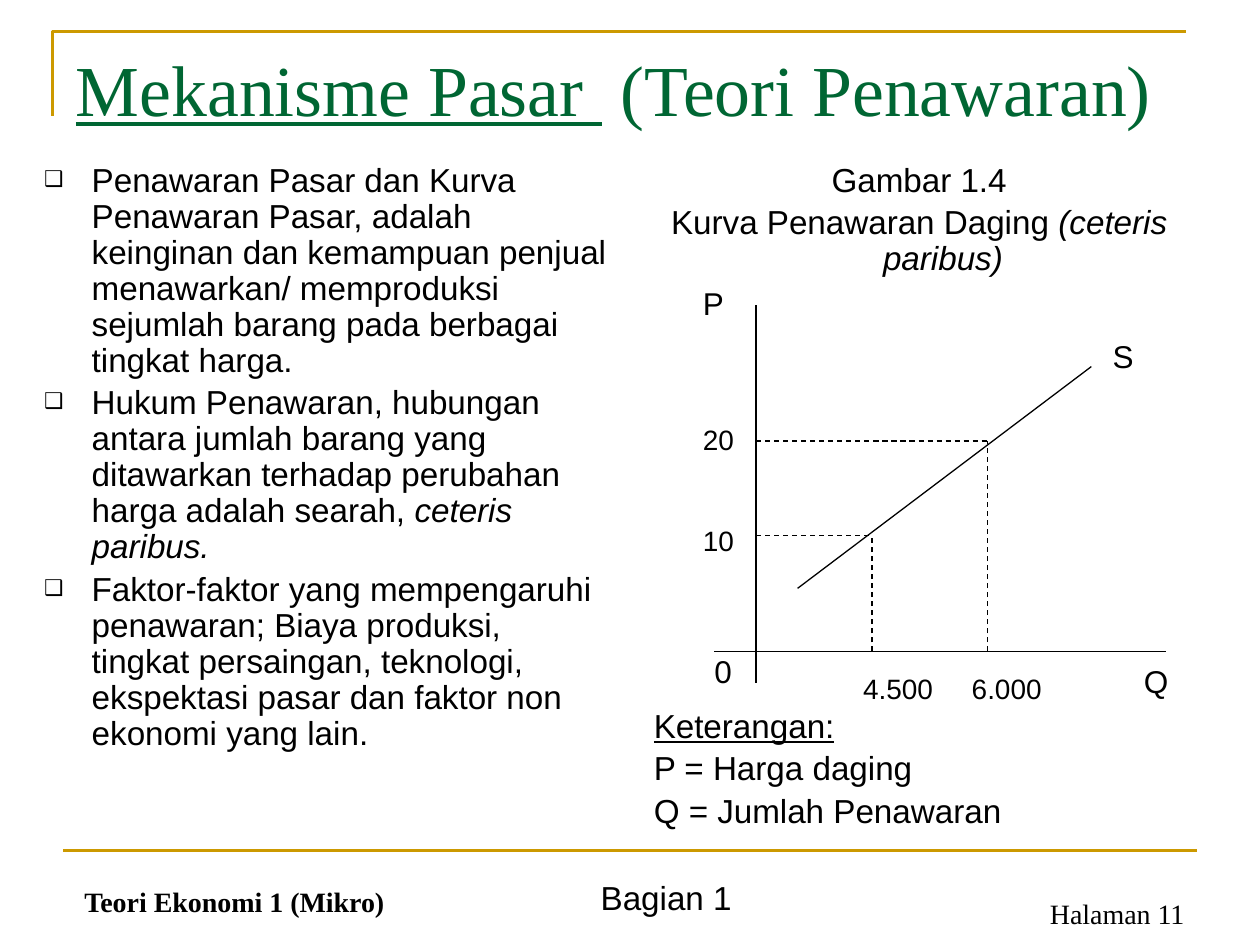
from lxml.etree import SubElement
from pptx import Presentation
from pptx.dml.color import RGBColor
from pptx.enum.dml import MSO_LINE
from pptx.enum.shapes import MSO_CONNECTOR
from pptx.enum.text import MSO_ANCHOR, PP_ALIGN
from pptx.oxml.ns import qn
from pptx.util import Cm, Pt

COLORS = {"text": "000000", "title": "006633", "rule": "CC9900"}
SANS, SERIF = "Arial", "Times New Roman"

# Diagram geometry in centimetres
AXIS_X, AXIS_Y = 15.24, 13.13
POINTS = [(17.58, 10.8), (19.91, 8.89)]
LABEL_W, LABEL_H = 2.2, 1.0

BULLETS = [
    [("Penawaran Pasar dan Kurva Penawaran Pasar, adalah keinginan dan "
      "kemampuan penjual menawarkan/ memproduksi sejumlah barang pada "
      "berbagai tingkat harga.", "")],
    [("Hukum Penawaran, hubungan antara jumlah barang yang ditawarkan "
      "terhadap perubahan harga adalah searah, ", ""),
     ("ceteris paribus.", "i")],
    [("Faktor-faktor yang mempengaruhi penawaran; Biaya produksi, tingkat "
      "persaingan, teknologi, ekspektasi pasar dan faktor non ekonomi yang "
      "lain.", "")],
]
CAPTION = [
    [("Gambar 1.4", "")],
    [("Kurva Penawaran Daging ", ""), ("(ceteris paribus)", "i")],
]
LEGEND = [
    [("Keterangan:", "u")],
    [("P = Harga daging", "")],
    [("Q = Jumlah Penawaran", "")],
]
LABELS = [
    ("P", 13.92, 5.61, 18),
    ("20", 13.92, 8.4, 16),
    ("10", 13.92, 10.42, 16),
    ("S", 22.18, 6.67, 18),
    ("0", 14.15, 13.02, 18),
    ("4.500", 17.15, 13.41, 16),
    ("6.000", 19.34, 13.41, 16),
    ("Q", 22.81, 13.23, 18),
]


def add_frame(slide, x, y, w, h, anchor=MSO_ANCHOR.TOP):
    tf = slide.shapes.add_textbox(Cm(x), Cm(y), Cm(w), Cm(h)).text_frame
    tf.word_wrap = True
    tf.vertical_anchor = anchor
    return tf


def add_runs(p, runs, size, font=SANS, color="text"):
    """Add (text, style) runs; style letters are b, i and u."""
    for text, style in runs:
        r = p.add_run()
        r.text = text
        r.font.name = font
        r.font.size = Pt(size)
        r.font.color.rgb = RGBColor.from_string(COLORS[color])
        r.font.bold = "b" in style
        r.font.italic = "i" in style
        r.font.underline = "u" in style


def add_text(slide, box, runs, size, font=SANS, color="text",
             align=PP_ALIGN.LEFT, anchor=MSO_ANCHOR.TOP):
    p = add_frame(slide, *box, anchor).paragraphs[0]
    p.alignment = align
    add_runs(p, runs, size, font, color)


def add_body_paragraph(tf, runs, align=PP_ALIGN.LEFT, before=3.6, bullet=None):
    """Add a paragraph with a hanging indent and an optional bullet."""
    p = tf.paragraphs[0] if not tf.text else tf.add_paragraph()
    p.alignment = align
    p.line_spacing = Pt(20.57)
    p.space_before = Pt(before)
    pPr = p._p.get_or_add_pPr()
    pPr.set("marL", str(Cm(0.96)))
    pPr.set("indent", str(Cm(-0.96)))
    if bullet:
        SubElement(pPr, qn("a:buSzPct"), val="65000")
        SubElement(pPr, qn("a:buFont"), typeface=SANS)
        SubElement(pPr, qn("a:buChar"), char=bullet)
    add_runs(p, runs, 19)


def add_line(slide, start, end, color="text", width=0.75, dashed=False):
    s = slide.shapes.add_connector(
        MSO_CONNECTOR.STRAIGHT, *(Cm(v) for v in (*start, *end)))
    s.line.color.rgb = RGBColor.from_string(COLORS[color])
    s.line.width = Pt(width)
    if dashed:
        s.line.dash_style = MSO_LINE.DASH
    SubElement(s._element.spPr, qn("a:effectLst"))


def add_corner_rule(slide):
    fb = slide.shapes.build_freeform(Cm(1.06), Cm(2.33))
    fb.add_line_segments(
        [(Cm(1.06), Cm(0.64)), (Cm(23.9), Cm(0.64))], close=False)
    sp = fb.convert_to_shape()
    sp.shadow.inherit = False
    sp.fill.background()
    sp.line.color.rgb = RGBColor.from_string(COLORS["rule"])
    sp.line.width = Pt(1.5)


def add_footer(slide):
    add_text(slide, (11.86, 17.56, 5.28, 1.07), [("Bagian 1", "")], 19)
    add_text(slide, (1.45, 17.36, 9.35, 1.27),
             [("Teori Ekonomi 1 (Mikro)", "b")], 16, SERIF,
             anchor=MSO_ANCHOR.BOTTOM)
    add_text(slide, (18.21, 17.94, 5.92, 0.9), [("Halaman 11", "")], 16,
             SERIF, align=PP_ALIGN.RIGHT)


def add_body(slide):
    tf = add_frame(slide, 0.64, 3.16, 11.84, 13.87)
    for runs in BULLETS:
        add_body_paragraph(tf, runs, bullet="❑")
    tf = add_frame(slide, 12.93, 3.16, 11.2, 14.17)
    for runs in CAPTION:
        add_body_paragraph(tf, runs, PP_ALIGN.CENTER)
    for i, runs in enumerate(LEGEND):
        # The first legend line leaves room for the diagram above it
        add_body_paragraph(tf, runs, before=3.6 if i else 246.8)


def add_supply_diagram(slide):
    add_line(slide, (AXIS_X, 6.15), (AXIS_X, 13.77))
    add_line(slide, (14.4, AXIS_Y), (23.5, AXIS_Y))
    add_line(slide, (16.08, 11.86), (22.0, 7.39))
    for x, y in POINTS:
        add_line(slide, (AXIS_X, y), (x, y), dashed=True)
        add_line(slide, (x, AXIS_Y), (x, y), dashed=True)
    for text, x, y, size in LABELS:
        add_text(slide, (x, y, LABEL_W, LABEL_H), [(text, "")], size)


def main():
    prs = Presentation()
    prs.slide_width, prs.slide_height = Cm(25.4), Cm(19.05)
    slide = prs.slides.add_slide(prs.slide_layouts[6])
    add_corner_rule(slide)
    add_line(slide, (1.27, 17.15), (24.13, 17.15), "rule", 1.5)
    add_footer(slide)
    add_text(slide, (1.28, 0.77, 22.86, 2.2),
             [("Mekanisme Pasar ", "u"), (" (Teori Penawaran)", "")],
             41, SERIF, "title")
    add_body(slide)
    add_supply_diagram(slide)
    prs.save("out.pptx")


if __name__ == "__main__":
    main()
